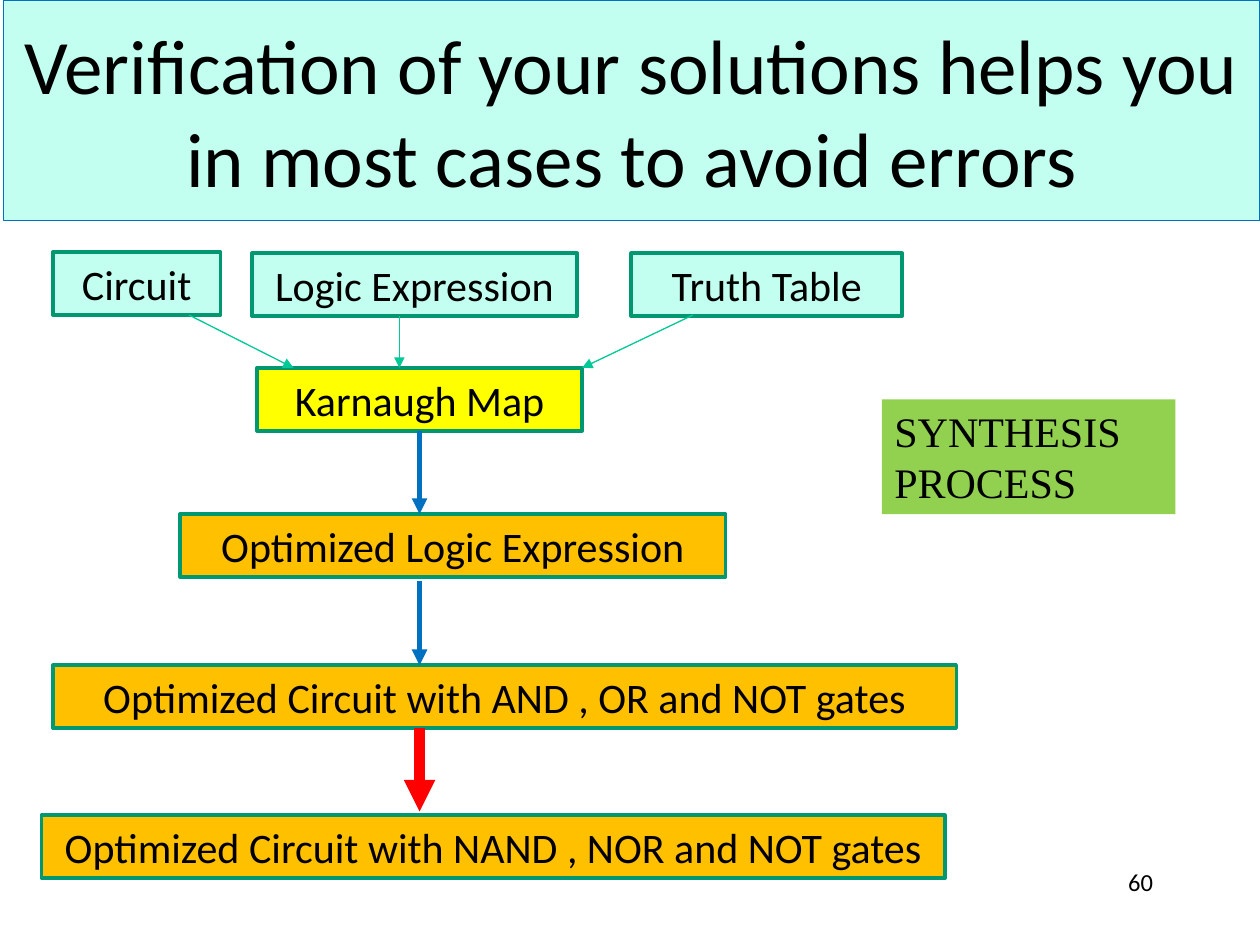
from lxml.etree import SubElement
from pptx import Presentation
from pptx.dml.color import RGBColor
from pptx.enum.shapes import MSO_CONNECTOR, MSO_SHAPE
from pptx.enum.text import MSO_ANCHOR, PP_ALIGN
from pptx.oxml.ns import qn
from pptx.util import Inches, Pt

BLACK = RGBColor(0x00, 0x00, 0x00)
MINT = RGBColor(0xC2, 0xFF, 0xF0)
YELLOW = RGBColor(0xFF, 0xFF, 0x00)
ORANGE = RGBColor(0xFF, 0xC0, 0x00)
LIME = RGBColor(0x92, 0xD0, 0x50)
GREEN = RGBColor(0x00, 0x97, 0x71)
TEAL = RGBColor(0x00, 0xC8, 0x96)
BLUE = RGBColor(0x00, 0x70, 0xC0)
RED = RGBColor(0xFF, 0x00, 0x00)

deck = Presentation()
deck.slide_width, deck.slide_height = Inches(10), Inches(7.5)
page = deck.slides.add_slide(deck.slide_layouts[6])


def add_box(text, left, top, width, height, fill=None, line=None, line_width=2,
            size=24, font="Calibri", align=PP_ALIGN.CENTER, anchor=MSO_ANCHOR.MIDDLE):
    """Add a rectangle with text; without fill or line that part stays invisible."""
    box = page.shapes.add_shape(MSO_SHAPE.RECTANGLE, Inches(left), Inches(top),
                                Inches(width), Inches(height))
    box.shadow.inherit = False
    if fill is None:
        box.fill.background()
    else:
        box.fill.solid()
        box.fill.fore_color.rgb = fill
    if line is None:
        box.line.fill.background()
    else:
        box.line.color.rgb = line
        box.line.width = Pt(line_width)
    frame = box.text_frame
    frame.word_wrap = True
    frame.vertical_anchor = anchor
    para = frame.paragraphs[0]
    para.alignment = align
    span = para.add_run()
    span.text = text
    span.font.size = Pt(size)
    span.font.name = font
    span.font.color.rgb = BLACK
    return box


def add_arrow(start, end, color, width):
    arrow = page.shapes.add_connector(MSO_CONNECTOR.STRAIGHT,
                                      *(Inches(value) for value in start + end))
    arrow.line.color.rgb = color
    arrow.line.width = Pt(width)
    SubElement(arrow.line._get_or_add_ln(), qn("a:tailEnd"), type="triangle")
    SubElement(arrow._element.spPr, qn("a:effectLst"))
    return arrow


add_box("Verification of your solutions helps you in most cases to avoid errors",
        0.03, 0, 9.97, 1.75, MINT, BLUE, line_width=0.75, size=44)
add_box("60", 7.17, 6.83, 2.08, 0.5, size=14, align=PP_ALIGN.RIGHT, anchor=MSO_ANCHOR.TOP)

# Design steps: text, left, top, width, fill
steps = [
    ("Circuit", 0.42, 2, 1.33, MINT),
    ("Logic Expression", 2, 2.01, 2.58, MINT),
    ("Truth Table", 5.01, 2.01, 2.15, MINT),
    ("Karnaugh Map", 2.04, 2.92, 2.58, YELLOW),
    ("Optimized Logic Expression", 1.43, 4.08, 4.33, ORANGE),
    ("Optimized Circuit with AND , OR and NOT gates", 0.42, 5.28, 7.17, ORANGE),
    ("Optimized Circuit with NAND , NOR and NOT gates", 0.33, 6.47, 7.17, ORANGE),
]
step_boxes = {text: add_box(text, left, top, width, 0.5, fill, GREEN)
              for text, left, top, width, fill in steps}

# Three inputs lead into the Karnaugh map
for start, end in [((3.17, 2.51), (3.17, 2.92)),
                   ((1.5, 2.5), (2.33, 2.92)),
                   ((5.5, 2.5), (4.62, 2.92))]:
    add_arrow(start, end, TEAL, 0.75)

# The flow runs straight down below the map
FLOW_X = 3.33
flow_arrows = [add_arrow((FLOW_X, top), (FLOW_X, bottom), color, width)
               for top, bottom, color, width in [(3.42, 4.08, BLUE, 3),
                                                 (4.61, 5.28, BLUE, 3),
                                                 (5.78, 6.44, RED, 6)]]
flow_arrows[0].begin_connect(step_boxes["Karnaugh Map"], 2)

add_box("SYNTHESIS PROCESS", 7, 3.17, 2.33, 0.91, LIME, font="Times New Roman",
        align=PP_ALIGN.LEFT, anchor=MSO_ANCHOR.TOP)

deck.save("out.pptx")
